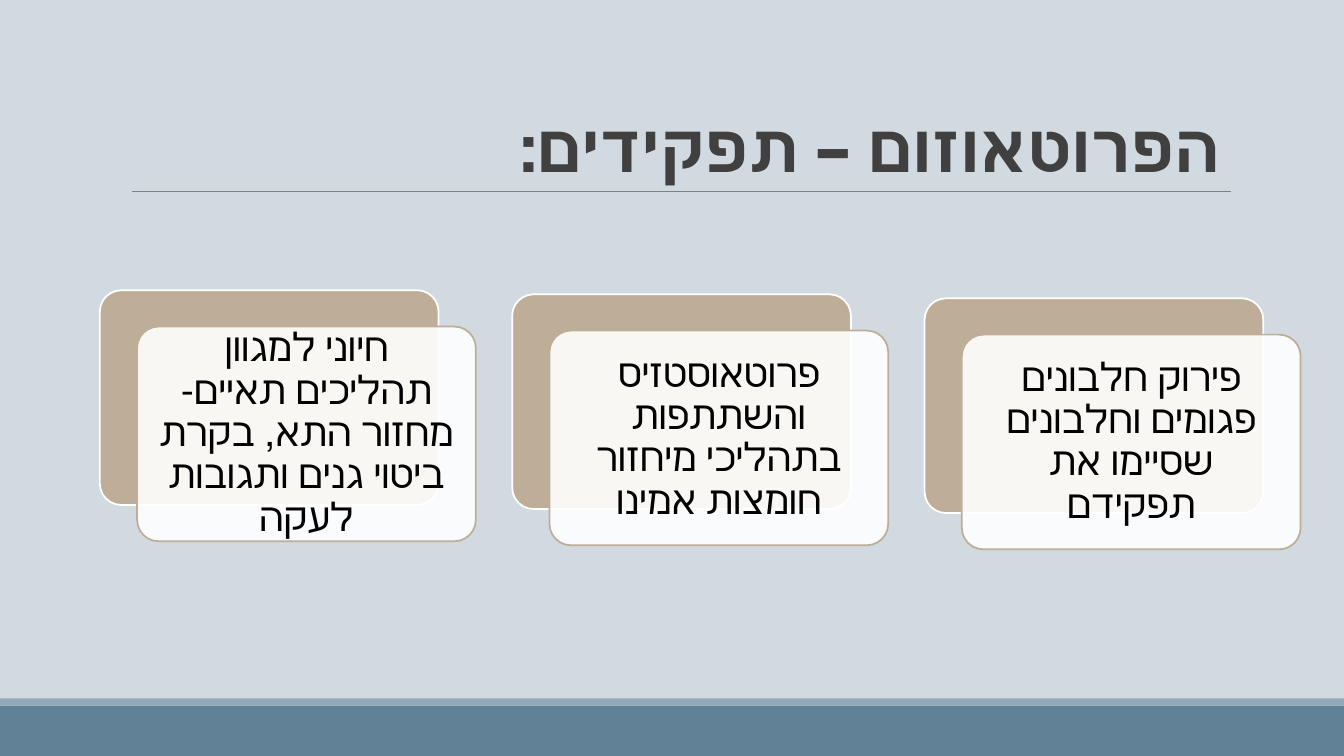
import pptx
import pptx.dml.color
import pptx.enum.shapes
import pptx.enum.text
import pptx.oxml.ns
import pptx.util
from lxml import etree

Inches = pptx.util.Inches
Pt = pptx.util.Pt
RGBColor = pptx.dml.color.RGBColor
Shapes = pptx.enum.shapes.MSO_SHAPE
Align = pptx.enum.text.PP_ALIGN
Anchor = pptx.enum.text.MSO_ANCHOR
qn = pptx.oxml.ns.qn

BACKGROUND = RGBColor(0xD1, 0xD9, 0xE1)
BAR = RGBColor(0x61, 0x81, 0x97)
BAR_EDGE = RGBColor(0x92, 0xA9, 0xB9)
RULE = RGBColor(0x80, 0x80, 0x80)
TITLE = RGBColor(0x40, 0x40, 0x40)
TAN = RGBColor(0xBE, 0xAE, 0x98)
WHITE = RGBColor(0xFF, 0xFF, 0xFF)
BLACK = RGBColor(0, 0, 0)

FONT = "Calibri"
CARD_WIDTH, CARD_HEIGHT = 3.36, 2.13
CARD_OFFSET_X, CARD_OFFSET_Y = 0.37, 0.36
CARDS_LEFT, CARDS_TOP = 0.99, 2.88
CARD_STEP_X, CARD_STEP_Y = 4.09, 0.04
CARD_TEXTS = [
    "חיוני למגוון תהליכים תאיים- מחזור התא, בקרת ביטוי גנים ותגובות לעקה",
    "פרוטאוסטזיס והשתתפות בתהליכי מיחזור חומצות אמינו",
    "פירוק חלבונים פגומים וחלבונים שסיימו את תפקידם",
]


def write_text(frame, text, size, color, align, anchor, line_spacing,
               inset=None, bold=False, rtl=False, tracking=None):
    frame.word_wrap = True
    frame.auto_size = pptx.enum.text.MSO_AUTO_SIZE.NONE
    frame.vertical_anchor = anchor
    if inset is not None:
        frame.margin_left = frame.margin_right = Inches(inset)
        frame.margin_top = frame.margin_bottom = Inches(inset)
    para = frame.paragraphs[0]
    para.alignment = align
    para.line_spacing = line_spacing
    if rtl:
        para._p.get_or_add_pPr().set("rtl", "1")
    span = para.add_run()
    span.text = text
    span.font.name = FONT
    span.font.size = Pt(size)
    span.font.bold = bold
    span.font.color.rgb = color
    properties = span._r.get_or_add_rPr()
    properties.set("lang", "he-IL")
    if tracking is not None:
        properties.set("spc", str(round(tracking * 100)))


def add_box(page, kind, left, top, width, height, fill, line=None, opacity=None):
    box = page.shapes.add_shape(kind, Inches(left), Inches(top),
                                Inches(width), Inches(height))
    box.shadow.inherit = False
    box.fill.solid()
    box.fill.fore_color.rgb = fill
    if opacity is not None:
        color = box._element.spPr.find(qn("a:solidFill"))[0]
        etree.SubElement(color, qn("a:alpha")).set("val", str(opacity * 1000))
    if line is None:
        box.line.fill.background()
    else:
        box.line.color.rgb = line
        box.line.width = Pt(1.25)
    return box


def add_footer_bars(page, top, width, height):
    edge = 0.07
    add_box(page, Shapes.RECTANGLE, 0, top + edge, width, height - edge, BAR)
    add_box(page, Shapes.RECTANGLE, 0, top, width, edge, BAR_EDGE)


def add_title(page, left, top, width, height):
    """Fill the title placeholder and rule a line along its bottom edge."""
    title = page.shapes.title
    title.left, title.top = Inches(left), Inches(top)
    title.width, title.height = Inches(width), Inches(height)
    write_text(title.text_frame, "הפרוטאוזום – תפקידים:", 48, TITLE, Align.RIGHT,
               Anchor.BOTTOM, 0.85, bold=True, rtl=True, tracking=-0.5)
    bottom = Inches(top + height)
    rule = page.shapes.add_connector(
        pptx.enum.shapes.MSO_CONNECTOR.STRAIGHT,
        Inches(left + 0.11), bottom, Inches(left + width + 0.01), bottom)
    rule.line.color.rgb = RULE
    rule.line.width = Pt(0.5)
    etree.SubElement(rule._element.spPr, qn("a:effectLst"))


def add_card(page, left, top, text):
    """Place a tan plate with a translucent text card shifted over it."""
    plate = add_box(page, Shapes.ROUNDED_RECTANGLE, left, top,
                    CARD_WIDTH, CARD_HEIGHT, TAN, line=WHITE)
    card = add_box(page, Shapes.ROUNDED_RECTANGLE, left + CARD_OFFSET_X,
                   top + CARD_OFFSET_Y, CARD_WIDTH, CARD_HEIGHT, WHITE,
                   line=TAN, opacity=90)
    for box in (plate, card):
        box.adjustments[0] = 0.1
    write_text(card.text_frame, text, 28, BLACK, Align.CENTER,
               Anchor.MIDDLE, 0.9, inset=0.12)


def build_roles_slide(deck):
    page = deck.slides.add_slide(deck.slide_layouts[5])
    page.background.fill.solid()
    page.background.fill.fore_color.rgb = BACKGROUND
    add_footer_bars(page, 6.93, 13.33, 0.57)
    add_title(page, 1.2, 0.31, 11, 1.59)
    for index, text in enumerate(CARD_TEXTS):
        add_card(page, CARDS_LEFT + index * CARD_STEP_X,
                 CARDS_TOP + index * CARD_STEP_Y, text)


def main():
    deck = pptx.Presentation()
    deck.slide_width, deck.slide_height = Inches(13.33), Inches(7.5)
    build_roles_slide(deck)
    deck.save("out.pptx")


if __name__ == "__main__":
    main()
